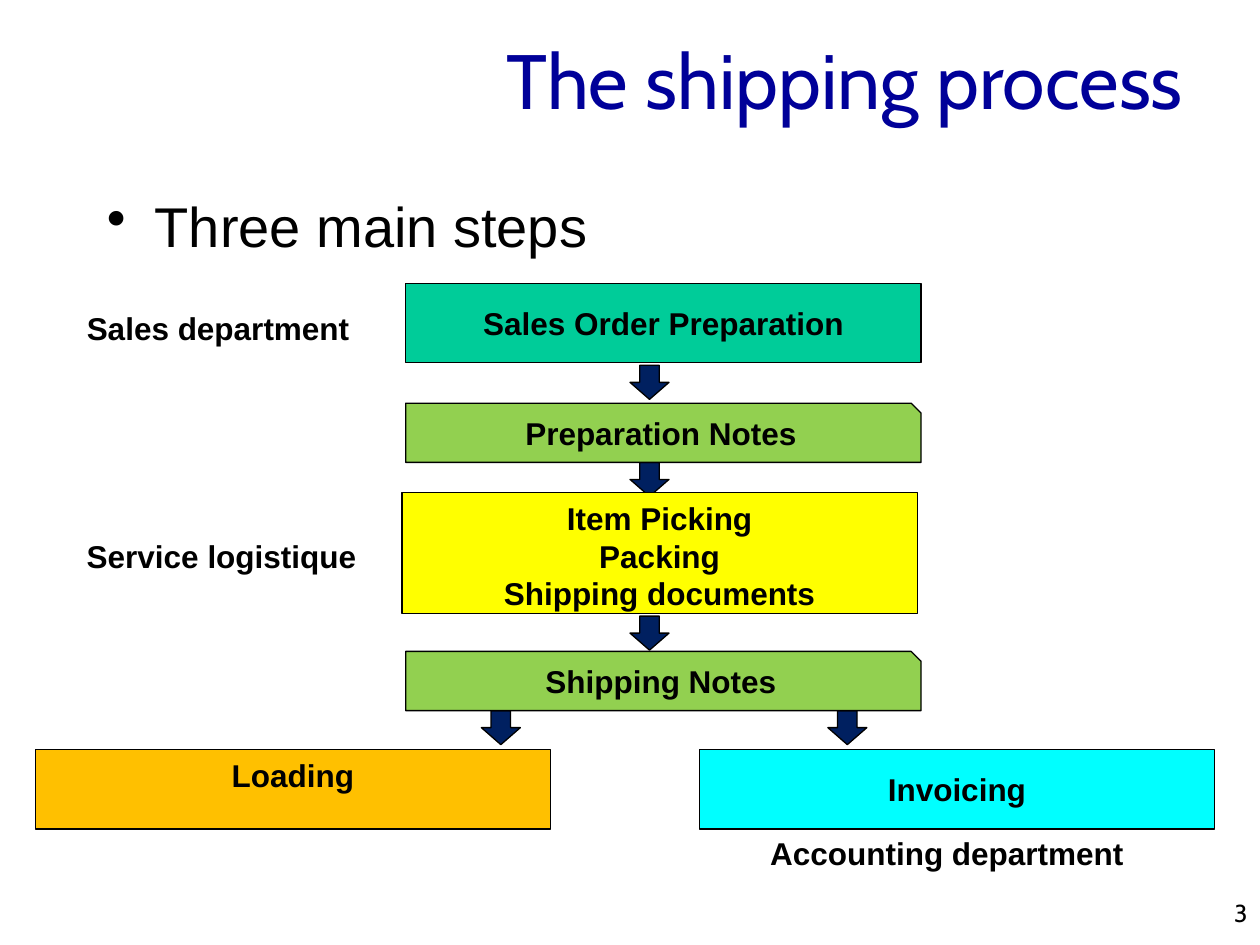
"""Build the shipping process flow slide."""
from lxml.etree import SubElement
from pptx import Presentation
from pptx.dml.color import RGBColor
from pptx.enum.shapes import MSO_SHAPE
from pptx.enum.text import MSO_ANCHOR, PP_ALIGN
from pptx.oxml.ns import qn
from pptx.util import Inches, Pt

TITLE = "The shipping process"
BULLET = "Three main steps"
SLIDE_NUMBER = "3"

BOX_WIDTH = 4.09
STEP_HEIGHT = 0.63
NOTE_HEIGHT = 0.47
ARROW_SIZE = (0.31, 0.27)
ARROWS = [(5, 2.9), (5, 3.67), (5, 4.89), (3.82, 5.64), (6.57, 5.64)]

RECTANGLE, NOTE = MSO_SHAPE.RECTANGLE, MSO_SHAPE.SNIP_1_RECTANGLE
TOP, MIDDLE = MSO_ANCHOR.TOP, MSO_ANCHOR.MIDDLE
LEFT, CENTER, RIGHT = PP_ALIGN.LEFT, PP_ALIGN.CENTER, PP_ALIGN.RIGHT

BOXES = [
    (["Sales Order Preparation"], RECTANGLE, 3.22, 2.25, STEP_HEIGHT, "00CC99", MIDDLE),
    (["Preparation Notes"], NOTE, 3.22, 3.2, NOTE_HEIGHT, "92D050", TOP),
    (["Item Picking", "Packing", "Shipping documents"], RECTANGLE, 3.19, 3.91, 0.96, "FFFF00", TOP),
    (["Shipping Notes"], NOTE, 3.22, 5.17, NOTE_HEIGHT, "92D050", TOP),
    (["Loading"], RECTANGLE, 0.28, 5.95, STEP_HEIGHT, "FFC000", TOP),
    (["Invoicing"], RECTANGLE, 5.55, 5.95, STEP_HEIGHT, "00FFFF", MIDDLE),
]
DEPARTMENTS = [
    ("Sales department", 0.59, 2.4, 2.31, LEFT, False),
    ("Service logistique", 0.59, 4.21, 2.36, LEFT, False),
    ("Accounting department", 5.94, 6.57, 3.15, CENTER, True),
]


def color(value):
    return RGBColor.from_string(value)


def write(shape, lines, size=18, font="Arial", ink="000000", bold=True,
          align=CENTER, anchor=TOP, wrap=True):
    frame = shape.text_frame
    frame.text = "\n".join(lines)
    frame.word_wrap = wrap
    frame.vertical_anchor = anchor
    for paragraph in frame.paragraphs:
        paragraph.alignment = align
        paragraph.font.name = font
        paragraph.font.size = Pt(size)
        paragraph.font.bold = bold
        paragraph.font.color.rgb = color(ink)


def add_text(slide, text, left, top, width, height, **style):
    box = slide.shapes.add_textbox(*map(Inches, (left, top, width, height)))
    write(box, [text], **style)
    return box


def add_block(slide, kind, left, top, width, height, fill):
    shape = slide.shapes.add_shape(kind, *map(Inches, (left, top, width, height)))
    shape.shadow.inherit = False
    shape.fill.solid()
    shape.fill.fore_color.rgb = color(fill)
    shape.line.color.rgb = color("000000")
    shape.line.width = Pt(0.75)
    return shape


def add_bullet(paragraph, indent):
    properties = paragraph._p.get_or_add_pPr()
    properties.set("marL", str(Inches(indent)))
    properties.set("indent", str(-Inches(indent)))
    bullet = SubElement(properties, qn("a:buChar"), char="•")
    properties.remove(bullet)
    properties.insert(0, bullet)


def main():
    presentation = Presentation()
    presentation.slide_width, presentation.slide_height = Inches(10), Inches(7.5)
    slide = presentation.slides.add_slide(presentation.slide_layouts[6])

    add_text(slide, TITLE, 0, 0, 9.49, 1.25, size=44, font="Cabin", ink="000099",
             bold=False, align=RIGHT, anchor=MIDDLE)
    body = add_text(slide, BULLET, 0.75, 1.47, 8.5, 0.79, size=32, bold=False, align=LEFT)
    add_bullet(body.text_frame.paragraphs[0], 0.38)
    add_text(slide, SLIDE_NUMBER, 7.92, 7.08, 2.08, 0.25, size=14, font="Cabin",
             bold=False, align=RIGHT)

    for left, top in ARROWS:
        add_block(slide, MSO_SHAPE.DOWN_ARROW, left, top, *ARROW_SIZE, "002060")
    for lines, kind, left, top, height, fill, anchor in BOXES:
        box = add_block(slide, kind, left, top, BOX_WIDTH, height, fill)
        write(box, lines, anchor=anchor)
    for name, left, top, width, align, wrap in DEPARTMENTS:
        add_text(slide, name, left, top, width, 0.4, align=align, wrap=wrap)

    presentation.save("out.pptx")


if __name__ == "__main__":
    main()
